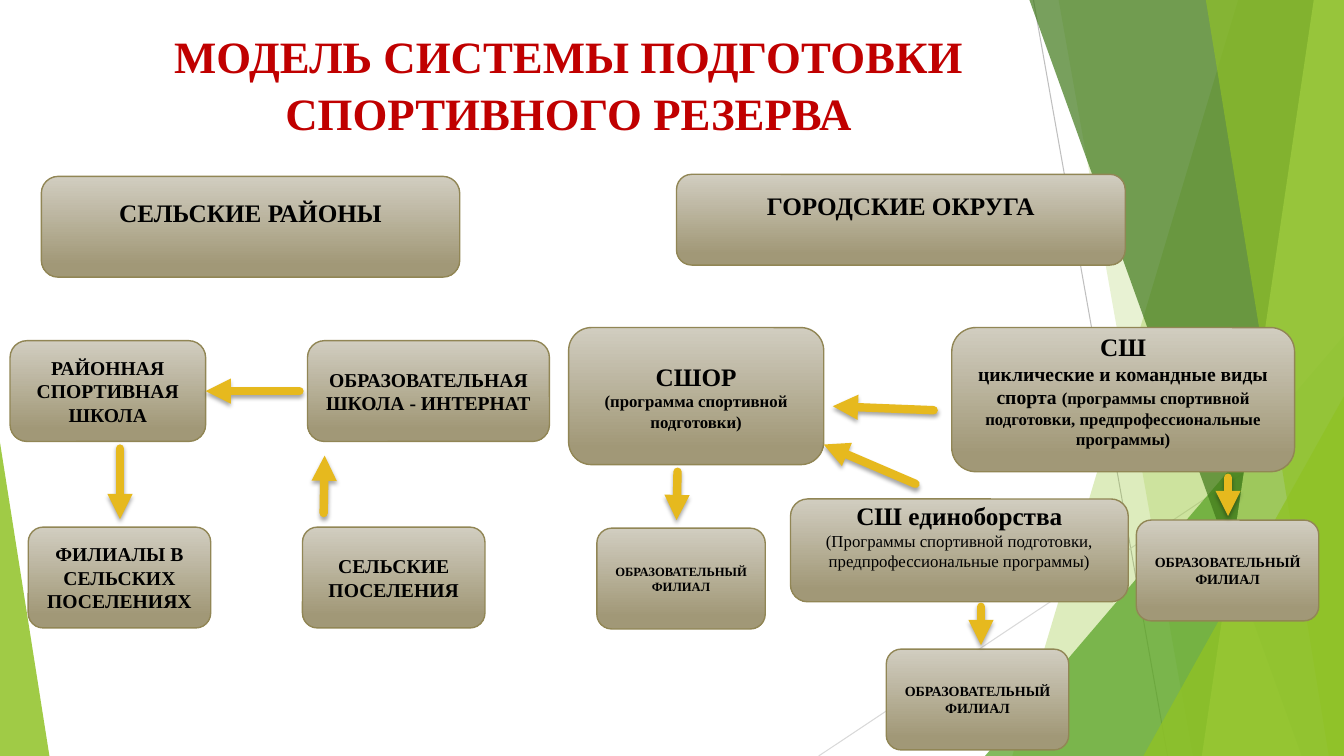
from dataclasses import dataclass
from typing import Optional

from lxml.etree import SubElement
from pptx import Presentation
from pptx.dml.color import RGBColor
from pptx.enum.shapes import MSO_CONNECTOR, MSO_SHAPE
from pptx.enum.text import MSO_ANCHOR, MSO_AUTO_SIZE, PP_ALIGN
from pptx.oxml.ns import qn
from pptx.util import Inches, Pt

FONT = "Times New Roman"
WIDTH, HEIGHT = 13.33, 7.5
DEFAULT_ROUND, SMALL_ROUND = 0.167, 0.148
ONE_LINE = 0.34


@dataclass
class Run:
    text: str
    size: int
    bold: bool = True


@dataclass
class Box:
    left: float
    top: float
    width: float
    height: float
    paragraphs: list[list[Run]]
    rounding: float = DEFAULT_ROUND
    bottom: float = 0.05


@dataclass
class Arrow:
    start: tuple[float, float]
    end: tuple[float, float]
    target: Optional[str] = None
    site: int = 0


@dataclass
class Band:
    top_x: float
    bottom_x: float
    color: str
    opacity: int
    right_x: float = WIDTH


@dataclass
class Triangle:
    left: float
    top: float
    width: float
    apex: float
    color: str
    opacity: int


def label(text: str, size: int) -> list[list[Run]]:
    return [[Run(text, size)]]


DECOR = [
    Band(12.28, 10.04, "90C226", 30),
    Band(10.5, 11.83, "90C226", 20),
    Triangle(9.77, 3.33, 3.56, 1, "54A021", 72),
    Band(10.21, 12.91, "3F7819", 70),
    Band(13.03, 11.92, "C0E474", 70),
    Band(11.96, 13.18, "90C226", 65),
    Triangle(11.34, 3.93, 1.99, 1, "90C226", 80),
    Triangle(0, 4.39, 0.49, 0, "90C226", 85),
]
THIN_LINES = [
    ((10.25, 0), (11.58, HEIGHT), "BFBFBF"),
    ((WIDTH, 4.03), (8.12, HEIGHT), "D9D9D9"),
]
BRANCH = "ОБРАЗОВАТЕЛЬНЫЙ ФИЛИАЛ"
BOXES = {
    "settlements": Box(3, 5.23, 1.81, 1, label("СЕЛЬСКИЕ ПОСЕЛЕНИЯ", 14), SMALL_ROUND),
    "district school": Box(0.1, 3.38, 1.94, 1, label("РАЙОННАЯ СПОРТИВНАЯ ШКОЛА", 14)),
    "boarding school": Box(3.05, 3.38, 2.4, 1, label("ОБРАЗОВАТЕЛЬНАЯ ШКОЛА - ИНТЕРНАТ", 14)),
    "urban": Box(6.71, 1.73, 4.45, 0.9, label("ГОРОДСКИЕ ОКРУГА", 18), bottom=ONE_LINE),
    "rural": Box(0.41, 1.75, 4.15, 1, label("СЕЛЬСКИЕ РАЙОНЫ", 18), bottom=ONE_LINE),
    "reserve school": Box(5.64, 3.25, 2.53, 1.36, [
        [Run("СШОР", 18)],
        [Run("(программа спортивной подготовки)", 12)],
    ]),
    "combat school": Box(7.84, 4.95, 3.35, 1.02, [
        [Run("СШ единоборства", 18)],
        [Run("(Программы спортивной подготовки, предпрофессиональные программы)", 12, False)],
    ], bottom=ONE_LINE),
    "team school": Box(9.44, 3.25, 3.4, 1.43, [
        [Run("СШ", 18)],
        [Run("циклические и командные виды спорта ", 14),
         Run("(программы спортивной подготовки, предпрофессиональные программы)", 12)],
    ], bottom=0.24),
    "rural branches": Box(0.28, 5.23, 1.81, 1, label("ФИЛИАЛЫ В СЕЛЬСКИХ ПОСЕЛЕНИЯХ", 14), SMALL_ROUND),
    "team branch": Box(11.27, 5.16, 1.81, 1, label(BRANCH, 10), SMALL_ROUND),
    "combat branch": Box(8.79, 6.44, 1.81, 1, label(BRANCH, 10), SMALL_ROUND),
    "reserve branch": Box(5.92, 5.24, 1.67, 1, label(BRANCH, 9), SMALL_ROUND),
}
ARROWS = [
    Arrow((3.21, 5.09), (3.22, 4.52)),
    Arrow((9.26, 4.07), (8.26, 4.03)),
    Arrow((2.97, 3.88), (2.04, 3.88), "district school", 3),
    Arrow((9.08, 4.8), (8.17, 4.41)),
    Arrow((1.19, 4.45), (1.19, 5.15)),
    Arrow((12.18, 4.74), (12.18, 5.12)),
    Arrow((6.72, 4.68), (6.71, 5.16)),
    Arrow((9.73, 6.02), (9.73, 6.4)),
]


def rgb(color: str) -> RGBColor:
    return RGBColor.from_string(color)


def draw_decor(s, item) -> None:
    if isinstance(item, Band):
        builder = s.shapes.build_freeform(Inches(item.top_x), 0)
        builder.add_line_segments([
            (Inches(item.right_x), 0),
            (Inches(item.right_x), Inches(HEIGHT)),
            (Inches(item.bottom_x), Inches(HEIGHT)),
        ])
        sp = builder.convert_to_shape()
    else:
        sp = s.shapes.add_shape(
            MSO_SHAPE.ISOSCELES_TRIANGLE, Inches(item.left), Inches(item.top),
            Inches(item.width), Inches(HEIGHT - item.top))
        sp.adjustments[0] = item.apex
    sp.shadow.inherit = False
    sp.line.fill.background()
    sp.fill.solid()
    sp.fill.fore_color.rgb = rgb(item.color)
    clr = sp.fill._xPr.find(".//" + qn("a:srgbClr"))
    SubElement(clr, qn("a:alpha"), val=str(item.opacity * 1000))


def draw_line(s, start, end, color: str, width: float):
    sp = s.shapes.add_connector(MSO_CONNECTOR.STRAIGHT, *map(Inches, start + end))
    sp.line.color.rgb = rgb(color)
    sp.line.width = Pt(width)
    effects = SubElement(sp._element.spPr, qn("a:effectLst"))
    return sp, effects


def draw_arrow(s, arrow: Arrow, boxes: dict) -> None:
    sp, effects = draw_line(s, arrow.start, arrow.end, "E6B91E", 6)
    if arrow.target:
        sp.end_connect(boxes[arrow.target], arrow.site)
    ln = sp.line._get_or_add_ln()
    ln.set("cap", "rnd")
    SubElement(ln, qn("a:tailEnd"), type="triangle")
    shadow = SubElement(effects, qn("a:outerShdw"), blurRad=str(Pt(3)),
                        dist=str(Pt(2)), dir="5400000", rotWithShape="0")
    clr = SubElement(shadow, qn("a:srgbClr"), val="000000")
    SubElement(clr, qn("a:alpha"), val="35000")


def draw_box(s, box: Box):
    sp = s.shapes.add_shape(
        MSO_SHAPE.ROUNDED_RECTANGLE,
        *map(Inches, (box.left, box.top, box.width, box.height)))
    sp.adjustments[0] = box.rounding
    sp.shadow.inherit = False
    sp.fill.gradient()
    sp.fill.gradient_angle = 270
    for stop, position, color in zip(sp.fill.gradient_stops, (0, 0.88), ("D1CDC0", "A19877")):
        stop.position = position
        stop.color.rgb = rgb(color)
    sp.line.color.rgb = rgb("918655")
    sp.line.width = Pt(1)
    tf = sp.text_frame
    tf.word_wrap = True
    tf.vertical_anchor = MSO_ANCHOR.MIDDLE
    tf.margin_bottom = Inches(box.bottom)
    for i, runs in enumerate(box.paragraphs):
        p = tf.add_paragraph() if i else tf.paragraphs[0]
        p.alignment = PP_ALIGN.CENTER
        p.font.name = FONT
        p.font.color.rgb = rgb("000000")
        p.font.bold = runs[0].bold
        p.font.size = Pt(runs[0].size)
        for run in runs:
            r = p.add_run()
            r.text = run.text
            if run.size != runs[0].size:
                r.font.size = Pt(run.size)
    return sp


def draw_title(s) -> None:
    sp = s.shapes.title
    sp.left, sp.top, sp.width, sp.height = map(Inches, (0.55, 0.21, 10.18, 1.44))
    tf = sp.text_frame
    tf.text = "МОДЕЛЬ СИСТЕМЫ ПОДГОТОВКИ СПОРТИВНОГО РЕЗЕРВА"
    tf.word_wrap = True
    tf.auto_size = MSO_AUTO_SIZE.NONE
    tf.vertical_anchor = MSO_ANCHOR.TOP
    p = tf.paragraphs[0]
    p.alignment = PP_ALIGN.CENTER
    p.line_spacing = 1.05
    p.font.name, p.font.size, p.font.bold = FONT, Pt(32), True
    p.font.color.rgb = rgb("C00000")


def main() -> None:
    prs = Presentation()
    prs.slide_width, prs.slide_height = Inches(WIDTH), Inches(HEIGHT)
    s = prs.slides.add_slide(prs.slide_layouts[5])
    draw_title(s)
    for start, end, color in THIN_LINES:
        draw_line(s, start, end, color, 0.75)
    for item in DECOR:
        draw_decor(s, item)
    boxes = {name: draw_box(s, box) for name, box in BOXES.items()}
    for arrow in ARROWS:
        draw_arrow(s, arrow, boxes)
    prs.save("out.pptx")


if __name__ == "__main__":
    main()
